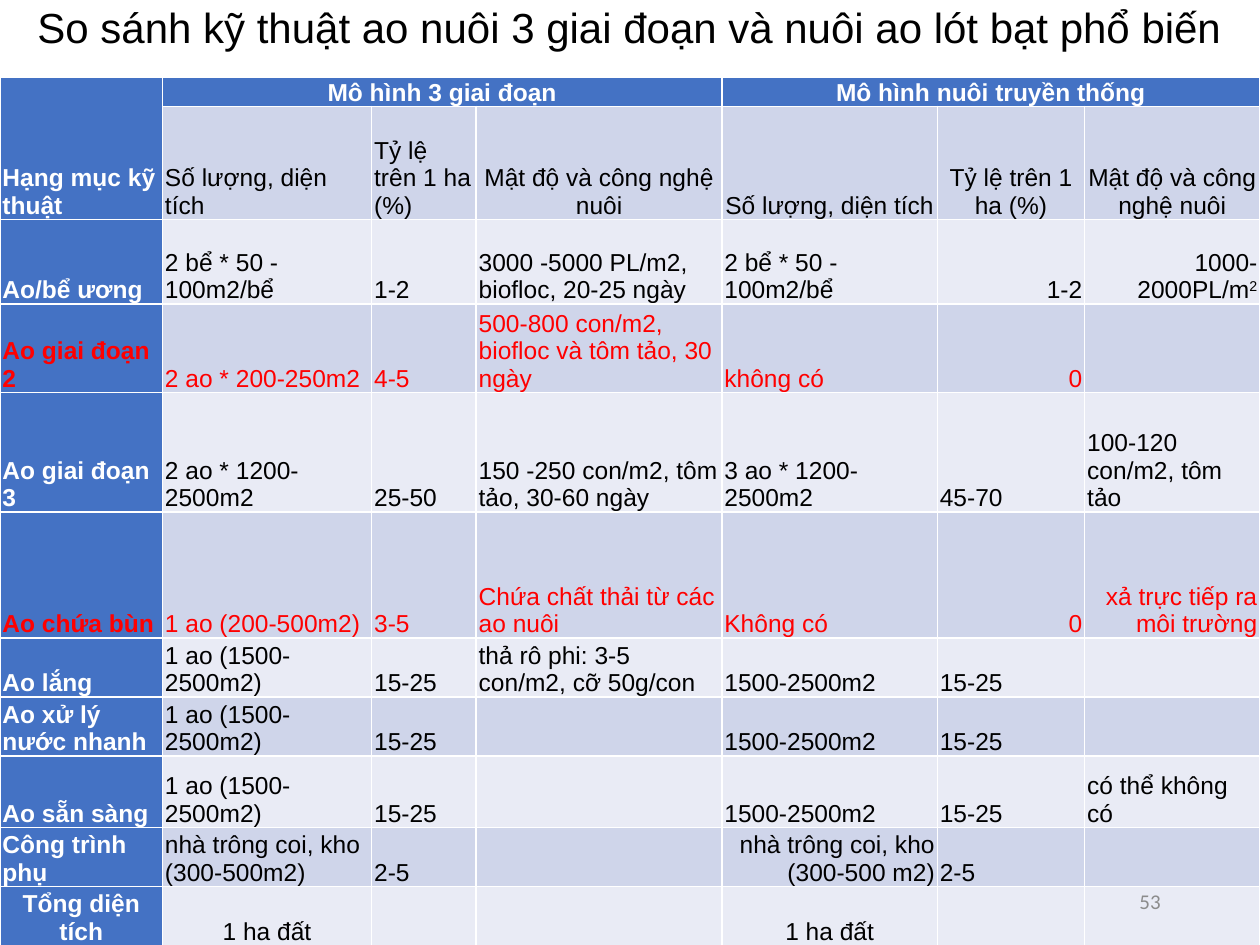
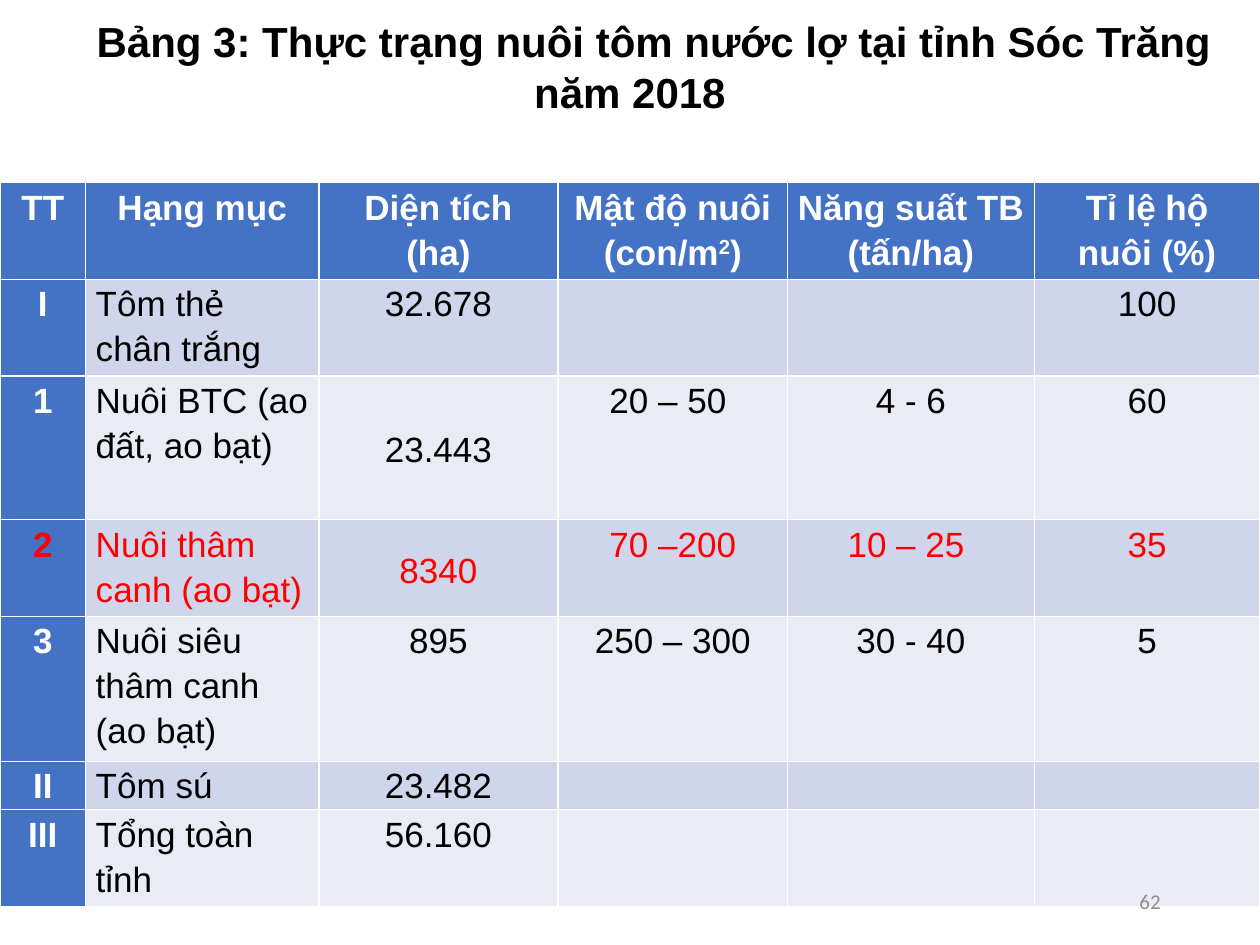
from pptx import Presentation
from pptx.dml.color import RGBColor
from pptx.enum.text import MSO_ANCHOR, PP_ALIGN
from pptx.util import Inches, Pt

TOP, MIDDLE, BOTTOM = MSO_ANCHOR.TOP, MSO_ANCHOR.MIDDLE, MSO_ANCHOR.BOTTOM
CENTER, RIGHT = PP_ALIGN.CENTER, PP_ALIGN.RIGHT
ALIGNMENTS = {"l": PP_ALIGN.LEFT, "c": CENTER, "r": RIGHT}
COLORS = {
    "header": "4472C4",
    "band_dark": "CFD5EA",
    "band_light": "E9EBF5",
    "header_text": "FFFFFF",
    "text": "000000",
    "highlight": "FF0000",
    "page_number": "8C8C8C",
}

COMPARISON_ROWS = [
    ("lcccccc", ["Hạng mục kỹ thuật", "Mô hình 3 giai đoạn", "", "",
                 "Mô hình nuôi truyền thống", "", ""]),
    ("lllcccc", ["", "Số lượng, diện tích", "Tỷ lệ trên 1 ha (%)", "Mật độ và công nghệ nuôi",
                 "Số lượng, diện tích", "Tỷ lệ trên 1 ha (%)", "Mật độ và công nghệ nuôi"]),
    ("lllllrr", ["Ao/bể ương", "2 bể * 50 - 100m2/bể", "1-2",
                 "3000 -5000 PL/m2, biofloc, 20-25 ngày",
                 "2 bể * 50 - 100m2/bể", "1-2", "1000-2000PL/m²"]),
    ("lllllrl", ["Ao giai đoạn 2", "2 ao * 200-250m2", "4-5",
                 "500-800 con/m2, biofloc và tôm tảo, 30 ngày", "không có", "0", ""]),
    ("lllllll", ["Ao giai đoạn 3", "2 ao * 1200-2500m2", "25-50",
                 "150 -250 con/m2, tôm tảo, 30-60 ngày",
                 "3 ao * 1200-2500m2", "45-70", "100-120 con/m2, tôm tảo"]),
    ("lllllrr", ["Ao chứa bùn", "1 ao (200-500m2)", "3-5", "Chứa chất thải từ các ao nuôi",
                 "Không có", "0", "xả trực tiếp ra môi trường"]),
    ("lllllll", ["Ao lắng", "1 ao (1500-2500m2)", "15-25",
                 "thả rô phi: 3-5 con/m2, cỡ 50g/con", "1500-2500m2", "15-25", ""]),
    ("lllllll", ["Ao xử lý nước nhanh", "1 ao (1500-2500m2)", "15-25", "",
                 "1500-2500m2", "15-25", ""]),
    ("lllllll", ["Ao sẵn sàng", "1 ao (1500-2500m2)", "15-25", "",
                 "1500-2500m2", "15-25", "có thể không có"]),
    ("llllrll", ["Công trình phụ", "nhà trông coi, kho (300-500m2)", "2-5", "",
                 "nhà trông coi, kho (300-500 m2)", "2-5", ""]),
    ("ccllcll", ["Tổng diện tích", "1 ha đất", "", "", "1 ha đất", "", ""]),
]

SHRIMP_HEADER = ["TT", "Hạng mục", "Diện tích (ha)", "Mật độ nuôi (con/m²)",
                 "Năng suất TB (tấn/ha)", "Tỉ lệ hộ nuôi (%)"]
SHRIMP_BODY = [
    ["I", "Tôm thẻ chân trắng", "32.678", "", "", "100"],
    ["1", "Nuôi BTC (ao đất, ao bạt)", "23.443", "20 – 50 ", "4 - 6", "60"],
    ["2", "Nuôi thâm canh (ao bạt)", "8340", "70 –200", "10 – 25 ", "35"],
    ["3", "Nuôi siêu thâm canh (ao bạt)", "895", "250 – 300", "30 - 40", "5"],
    ["II", "Tôm sú", "23.482", "", "", ""],
    ["III", "Tổng toàn tỉnh", "56.160", "", "", ""],
]
SHRIMP_ROWS = [("cccccc", SHRIMP_HEADER)] + [("clcccc", cells) for cells in SHRIMP_BODY]


class Deck:
    def __init__(self):
        self.presentation = Presentation()
        self.presentation.slide_width = Inches(10)
        self.presentation.slide_height = Inches(7.5)
        self.slide = None

    def new_slide(self):
        self.slide = self.presentation.slides.add_slide(self.presentation.slide_layouts[6])

    def style_runs(self, paragraph, size, color, bold=False, font="Arial"):
        for run in paragraph.runs:
            run.font.name = font
            run.font.size = Pt(size)
            run.font.bold = bold
            run.font.color.rgb = RGBColor.from_string(COLORS[color])

    def text(self, content, box, align, size, color, bold=False, font="Arial"):
        frame = self.slide.shapes.add_textbox(*map(Inches, box)).text_frame
        frame.word_wrap = True
        frame.vertical_anchor = MIDDLE
        frame.text = content
        paragraph = frame.paragraphs[0]
        paragraph.alignment = align
        self.style_runs(paragraph, size, color, bold, font)
        return paragraph

    def title(self, content, box, bold=False, spacing=1.0, indent=0):
        paragraph = self.text(content, box, CENTER, 24, "text", bold)
        paragraph.line_spacing = spacing
        if indent:
            paragraph._p.get_or_add_pPr().set("indent", str(Inches(indent)))

    def page_number(self, number):
        self.text(str(number), (7.06, 6.95, 2.25, 0.4), RIGHT, 12, "page_number", font="Calibri")

    def cell_text(self, cell, content, align, size, color, bold, spacing, after):
        paragraph = cell.text_frame.paragraphs[0]
        base, mark, rest = content.partition("²")
        paragraph.text = base
        if mark:
            exponent = paragraph.add_run()
            exponent.text = "2"
            exponent.font._element.set("baseline", "30000")
            if rest:
                paragraph.add_run().text = rest
        paragraph.alignment = ALIGNMENTS[align]
        paragraph.line_spacing = spacing
        paragraph.space_after = Pt(after)
        self.style_runs(paragraph, size, color, bold)

    def table(self, rows, top, widths, heights, size, anchor, margin, highlighted,
              merges=(), middle_cells=(), spacing=1.0, after=0):
        table = self.slide.shapes.add_table(
            len(rows), len(widths), 0, Inches(top),
            Inches(sum(widths)), Inches(sum(heights))).table
        table.first_col = True
        for column, width in zip(table.columns, widths):
            column.width = Inches(width)
        for row, height in zip(table.rows, heights):
            row.height = Inches(height)
        for first, last in merges:
            table.cell(*first).merge(table.cell(*last))
        for r, (aligns, contents) in enumerate(rows):
            band = "band_dark" if r % 2 else "band_light"
            for c, (align, content) in enumerate(zip(aligns, contents)):
                cell = table.cell(r, c)
                is_header = r == 0 or c == 0
                cell.margin_left = cell.margin_right = Inches(margin)
                cell.margin_top = cell.margin_bottom = 0
                cell.vertical_anchor = MIDDLE if (r, c) in middle_cells else anchor
                cell.fill.solid()
                cell.fill.fore_color.rgb = RGBColor.from_string(
                    COLORS["header" if is_header else band])
                if content:
                    color = "header_text" if is_header else "text"
                    if r in highlighted:
                        color = "highlight"
                    self.cell_text(cell, content, align, size, color, is_header, spacing, after)


def main():
    deck = Deck()

    deck.new_slide()
    deck.title("So sánh kỹ thuật ao nuôi 3 giai đoạn và nuôi ao lót bạt phổ biến",
               (0.14, 0, 9.71, 0.47), spacing=0.9)
    deck.table(COMPARISON_ROWS, 0.61,
               [1.29, 1.66, 0.83, 1.95, 1.71, 1.17, 1.39],
               [0.22, 0.9, 0.67, 0.66, 0.95, 1, 0.44, 0.44, 0.57, 0.44, 0.44],
               size=14, anchor=BOTTOM, margin=0.02, highlighted={3, 5},
               merges=[((0, 0), (1, 0)), ((0, 1), (0, 3)), ((0, 4), (0, 6))])
    deck.page_number(53)

    deck.new_slide()
    deck.table(SHRIMP_ROWS, 1.45,
               [0.68, 1.85, 1.9, 1.82, 1.96, 1.79],
               [0.75, 0.75, 1.14, 0.75, 1.14, 0.36, 0.71],
               size=20, anchor=TOP, margin=0.08, highlighted={3},
               middle_cells={(2, 2), (3, 2)}, spacing=1.15, after=5)
    deck.page_number(62)
    deck.title("Bảng 3: Thực trạng nuôi tôm nước lợ tại tỉnh Sóc Trăng năm 2018",
               (0, 0.07, 10, 0.91), bold=True, indent=0.38)

    deck.presentation.save("out.pptx")


if __name__ == "__main__":
    main()
